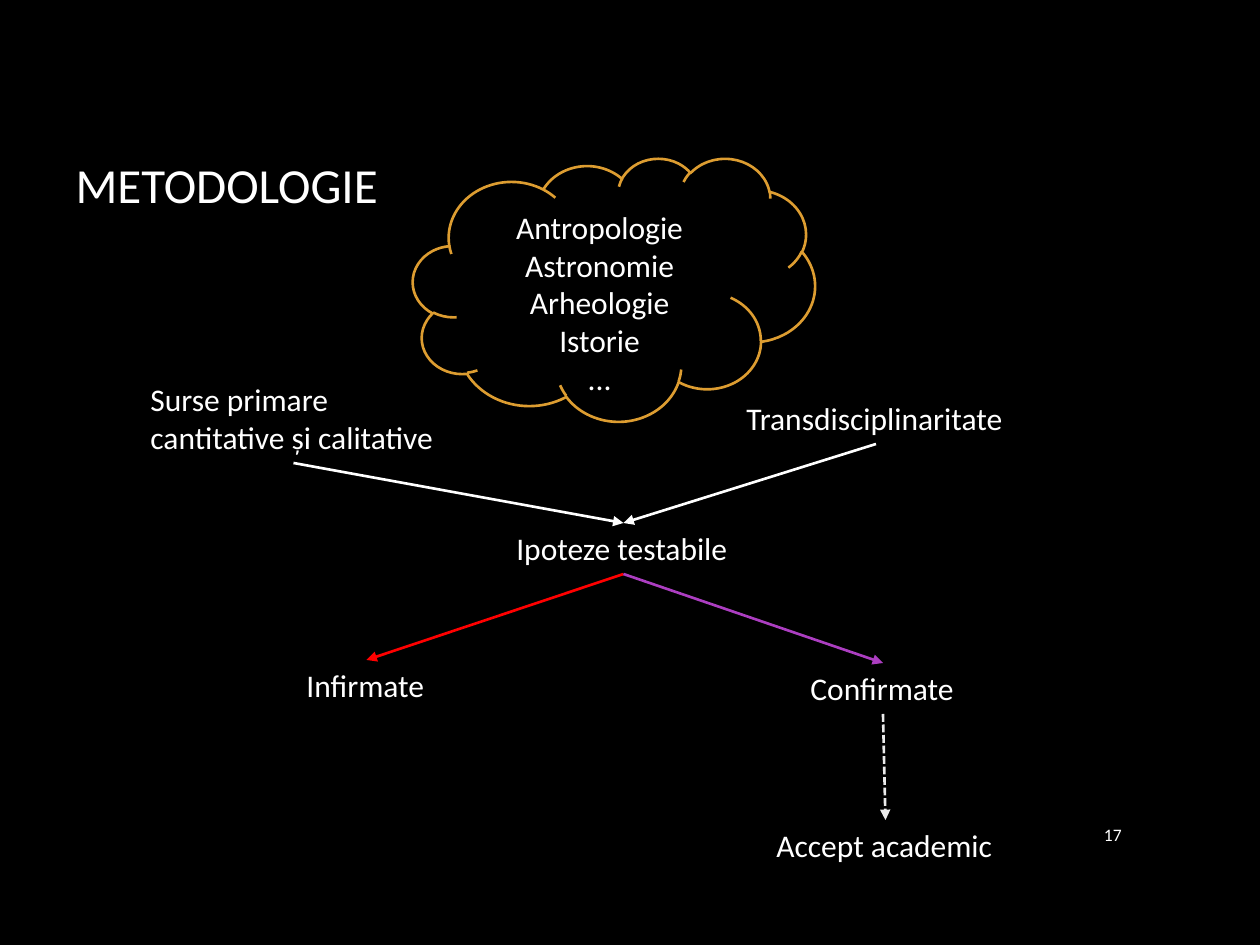
"""Build the methodology slide: sources lead to hypotheses, then to outcomes."""
from lxml import etree
from pptx import Presentation
from pptx.dml.color import RGBColor
from pptx.enum.dml import MSO_LINE
from pptx.enum.shapes import MSO_CONNECTOR, MSO_SHAPE
from pptx.enum.text import MSO_ANCHOR, MSO_AUTO_SIZE, PP_ALIGN
from pptx.oxml.ns import qn
from pptx.util import Emu, Pt

STRAIGHT = MSO_CONNECTOR.STRAIGHT
CLOUD = MSO_SHAPE.CLOUD
DASHED = MSO_LINE.SQUARE_DOT
FIT_SHAPE = MSO_AUTO_SIZE.SHAPE_TO_FIT_TEXT
MIDDLE = MSO_ANCHOR.MIDDLE
LEFT, CENTER, RIGHT = PP_ALIGN.LEFT, PP_ALIGN.CENTER, PP_ALIGN.RIGHT
TOP_SIDE, BOTTOM_SIDE = 0, 2

COLORS = {
    "background": "000000",
    "text": "FFFFFF",
    "cloud": "DD9D31",
    "source": "FFFFFF",
    "refuted": "FF0000",
    "confirmed": "AC3EC1",
    "accepted": "EBEBEB",
}
FONT = "Calibri"
EMU_PER_PX = 914400 / 126

TITLE = ("METODOLOGIE", (63, 84, 1071, 200))
PAGE_NUMBER = ("17", (1076, 809, 58, 52))
DISCIPLINES = ("Antropologie\nAstronomie\nArheologie\nIstorie\n...", (413, 158, 402, 263))
CLOUD_TOP_MARGIN = 44
STEPS = {
    "sources": ("Surse primare\ncantitative și calitative", (138, 374, 311, 89)),
    "transdisciplinary": ("Transdisciplinaritate", (734, 393, 284, 51)),
    "hypotheses": ("Ipoteze testabile", (504, 523, 239, 51)),
    "refuted": ("Infirmate", (294, 660, 145, 51)),
    "confirmed": ("Confirmate", (798, 663, 170, 51)),
    "accepted": ("Accept academic", (764, 820, 243, 51)),
}
ARROWS = [
    ("sources", "hypotheses", "source", None),
    ("transdisciplinary", "hypotheses", "source", None),
    ("hypotheses", "refuted", "refuted", None),
    ("hypotheses", "confirmed", "confirmed", None),
    ("confirmed", "accepted", "accepted", DASHED),
]


def px(length):
    return Emu(round(length * EMU_PER_PX))


def color(name):
    return RGBColor.from_string(COLORS[name])


def write(frame, text, size, align=LEFT):
    frame.text = text
    for paragraph in frame.paragraphs:
        paragraph.alignment = align
        for run in paragraph.runs:
            run.font.name = FONT
            run.font.size = Pt(size)
            run.font.color.rgb = color("text")


def style_line(line, name):
    line.color.rgb = color(name)
    line.width = Pt(1.5)


def add_label(slide, text, box, size=18, align=LEFT):
    label = slide.shapes.add_textbox(*map(px, box))
    write(label.text_frame, text, size, align)
    return label


def add_step(slide, text, box):
    step = add_label(slide, text, box)
    step.text_frame.word_wrap = False
    step.text_frame.auto_size = FIT_SHAPE
    return step


def add_arrow(slide, start, end, color_name, dash):
    arrow = slide.shapes.add_connector(STRAIGHT, 0, 0, 0, 0)
    arrow.begin_connect(start, BOTTOM_SIDE)
    arrow.end_connect(end, TOP_SIDE)
    style_line(arrow.line, color_name)
    if dash is not None:
        arrow.line.dash_style = dash
    etree.SubElement(arrow.line._get_or_add_ln(), qn("a:tailEnd"), type="triangle")
    etree.SubElement(arrow._element.spPr, qn("a:effectLst"))


def add_cloud(slide, text, box):
    cloud = slide.shapes.add_shape(CLOUD, *map(px, box))
    cloud.shadow.inherit = False
    cloud.fill.background()
    style_line(cloud.line, "cloud")
    frame = cloud.text_frame
    frame.vertical_anchor = MIDDLE
    frame.margin_top = px(CLOUD_TOP_MARGIN)
    write(frame, text, 18, CENTER)


def main():
    deck = Presentation()
    deck.slide_width, deck.slide_height = px(1260), px(945)
    slide = deck.slides.add_slide(deck.slide_layouts[5])
    slide.background.fill.solid()
    slide.background.fill.fore_color.rgb = color("background")

    add_cloud(slide, *DISCIPLINES)

    title_text, title_box = TITLE
    title = slide.shapes.title
    title.left, title.top, title.width, title.height = map(px, title_box)
    title.text_frame.vertical_anchor = MIDDLE
    write(title.text_frame, title_text, 28)

    page_number = add_label(slide, *PAGE_NUMBER, size=10, align=RIGHT)
    page_number.text_frame.vertical_anchor = MIDDLE
    page_number.text_frame.word_wrap = True

    steps = {name: add_step(slide, *content) for name, content in STEPS.items()}
    for start, end, color_name, dash in ARROWS:
        add_arrow(slide, steps[start], steps[end], color_name, dash)

    deck.save("out.pptx")


if __name__ == "__main__":
    main()
